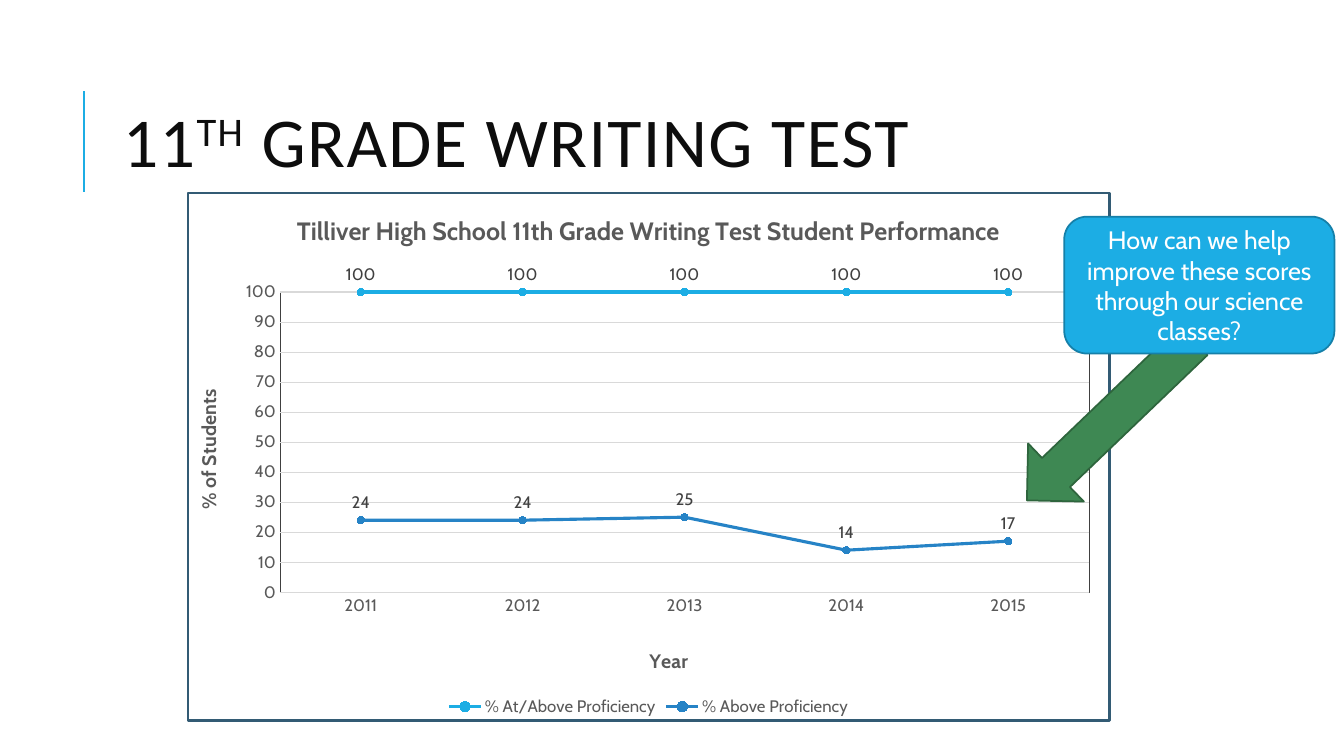
from pptx import Presentation, util as u
from pptx.chart.data import CategoryChartData
from pptx.dml.color import RGBColor
from pptx.enum import chart as ch, shapes, text
from pptx.oxml import parse_xml
from pptx.oxml.ns import nsdecls, qn

BODY_FONT = "Cabin"
GREY, GRID = "595959", "D9D9D9"
YEARS = ["2011", "2012", "2013", "2014", "2015"]
SCORES = [
    ("% At/Above Proficiency", [100, 100, 100, 100, 100], "1CADE4"),
    ("% Above Proficiency", [24, 24, 25, 14, 17], "2683C6"),
]


def rgb(value):
    """Return a colour from a hex string."""
    return RGBColor.from_string(value)


def box(*lengths):
    """Return the given centimetre values as lengths."""
    return [u.Cm(v) for v in lengths]


def style_font(font, size, color, name=BODY_FONT, bold=False):
    """Set the size, colour, face and weight of a font."""
    font.size, font.name, font.bold = u.Pt(size), name, bold
    font.color.rgb = rgb(color)


def style_line(line, color, width):
    """Set the colour and width of an outline."""
    line.color.rgb = rgb(color)
    line.width = u.Pt(width)


def add_title(s, pieces):
    """Fill the title placeholder with (text, baseline) pieces."""
    sp = s.shapes.title
    sp.left, sp.top, sp.width, sp.height = box(2.84, 1.63, 27, 4.17)
    tf = sp.text_frame
    tf.auto_size = text.MSO_AUTO_SIZE.NONE
    tf.vertical_anchor = text.MSO_ANCHOR.MIDDLE
    p = tf.paragraphs[0]
    p.alignment, p.line_spacing = text.PP_ALIGN.LEFT, 0.8
    for words, baseline in pieces:
        r = p.add_run()
        r.text = words
        style_font(r.font, 50, "0D0D0D", "Calibri")
        rPr = r.font._element
        rPr.set("spc", "100")
        rPr.set("baseline", str(baseline))


def add_rule(s, x, y1, y2):
    """Draw the vertical accent line beside the title."""
    cxn = s.shapes.add_connector(shapes.MSO_CONNECTOR.STRAIGHT, *box(x, y2, x, y1))
    style_line(cxn.line, "1CADE4", 1.5)
    cxn._element.spPr.append(parse_xml(f"<a:effectLst {nsdecls('a')}/>"))


def add_block(s, kind, place, fill, edge):
    """Add a filled, outlined shape without a shadow."""
    sp = s.shapes.add_shape(kind, *box(*place))
    sp.shadow.inherit = False
    sp.fill.solid()
    sp.fill.fore_color.rgb = rgb(fill)
    style_line(sp.line, edge, 1.25)
    return sp


def add_callout(s, words):
    """Add the rounded box that asks the question."""
    sp = add_block(s, shapes.MSO_SHAPE.ROUNDED_RECTANGLE, (26.82, 5.46, 6.81, 3.45),
                   "1CADE4", "1580A9")
    tf = sp.text_frame
    tf.text = words
    tf.word_wrap = True
    tf.vertical_anchor = text.MSO_ANCHOR.MIDDLE
    p = tf.paragraphs[0]
    p.alignment = text.PP_ALIGN.CENTER
    style_font(p.runs[0].font, 18, "FFFFFF")


def set_layout(element, index, x, y, size=None):
    """Place a chart part by fractions of the chart area."""
    for old in element.findall(qn("c:layout")):
        element.remove(old)
    parts = [("xMode", "edge"), ("yMode", "edge"), ("x", x), ("y", y)]
    if size:
        parts.insert(0, ("layoutTarget", "inner"))
        parts += [("w", size[0]), ("h", size[1])]
    inner = "".join(f'<c:{tag} val="{val}"/>' for tag, val in parts)
    element.insert(index, parse_xml(
        f"<c:layout {nsdecls('c')}><c:manualLayout>{inner}</c:manualLayout></c:layout>"))


def outline_xml(color, width):
    """Return chart shape properties with an outline and no fill."""
    return parse_xml(
        f'<c:spPr {nsdecls("c", "a")}><a:noFill/><a:ln w="{u.Pt(width)}"><a:solidFill>'
        f'<a:srgbClr val="{color}"/></a:solidFill></a:ln></c:spPr>')


def set_chart_title(title, words, size, place=None):
    """Write and format a chart or axis title, and place it if asked."""
    tf = title.text_frame
    tf.text = words
    style_font(tf.paragraphs[0].runs[0].font, size, GREY, bold=True)
    if place:
        set_layout(title._element, 1, *place)


def style_axes(chart):
    """Format both axes and their titles."""
    cat, val = chart.category_axis, chart.value_axis
    for axis in (cat, val):
        axis.major_tick_mark = axis.minor_tick_mark = ch.XL_TICK_MARK.NONE
        style_font(axis.tick_labels.font, 12, GREY)
    style_line(cat.format.line, GRID, 0.75)
    val.format.line.fill.background()
    style_line(val.major_gridlines.format.line, GRID, 0.75)
    val.minimum_scale, val.maximum_scale, val.major_unit = 0, 100, 10
    set_chart_title(cat.axis_title, "Year", 14, (0.497, 0.854))
    set_chart_title(val.axis_title, "% of Students", 14, (0.004, 0.365))
    bodyPr = val.axis_title.text_frame._txBody.bodyPr
    bodyPr.set("rot", "-5400000")
    bodyPr.set("vert", "horz")


def style_series(series, color):
    """Format the line, markers and labels of one series."""
    series.smooth = False
    style_line(series.format.line, color, 2.25)
    marker = series.marker
    marker.style, marker.size = ch.XL_MARKER_STYLE.CIRCLE, 5
    marker.format.fill.solid()
    marker.format.fill.fore_color.rgb = rgb(color)
    style_line(marker.format.line, color, 0.75)
    labels = series.data_labels
    labels.show_value = True
    labels.position = ch.XL_LABEL_POSITION.ABOVE
    style_font(labels.font, 12, "404040")


def add_score_chart(s):
    """Add the line chart of writing test scores."""
    data = CategoryChartData()
    data.categories = YEARS
    for name, values, _ in SCORES:
        data.add_series(name, values)
    chart = s.shapes.add_chart(ch.XL_CHART_TYPE.LINE_MARKERS,
                               *box(4.7, 4.83, 23.29, 13.36), data).chart
    style_font(chart.font, 10, "000000")
    chart.has_title = True
    set_chart_title(chart.chart_title,
                    "Tilliver High School 11th Grade Writing Test Student Performance", 18)
    style_axes(chart)
    chart.plots[0].vary_by_categories = False
    for series, (_, _, color) in zip(chart.plots[0].series, SCORES):
        style_series(series, color)
    chart.has_legend = True
    chart.legend.position = ch.XL_LEGEND_POSITION.BOTTOM
    chart.legend.include_in_layout = False
    style_font(chart.legend.font, 12, GREY)
    frame = chart._chartSpace.find(qn("c:chart"))
    frame.addnext(outline_xml("335B74", 1.75))
    plot_area = frame.find(qn("c:plotArea"))
    set_layout(plot_area, 0, 0.1, 0.188, (0.878, 0.569))
    plot_area.append(outline_xml("404040", 0.25))


def main():
    """Build the slide and save it."""
    prs = Presentation()
    prs.slide_width, prs.slide_height = box(33.87, 19.05)
    s = prs.slides.add_slide(prs.slide_layouts[5])
    add_rule(s, 2.11, 2.29, 4.83)
    add_title(s, [("11", 0), ("TH", 30000), (" GRADE WRITING TEST", 0)])
    add_score_chart(s)
    arrow = add_block(s, shapes.MSO_SHAPE.LEFT_ARROW, (25.07, 9.58, 5.82, 2.03),
                      "3E8853", "2E653D")
    arrow.rotation = 316.2
    add_callout(s, "How can we help improve these scores through our science classes?")
    prs.save("out.pptx")


if __name__ == "__main__":
    main()
